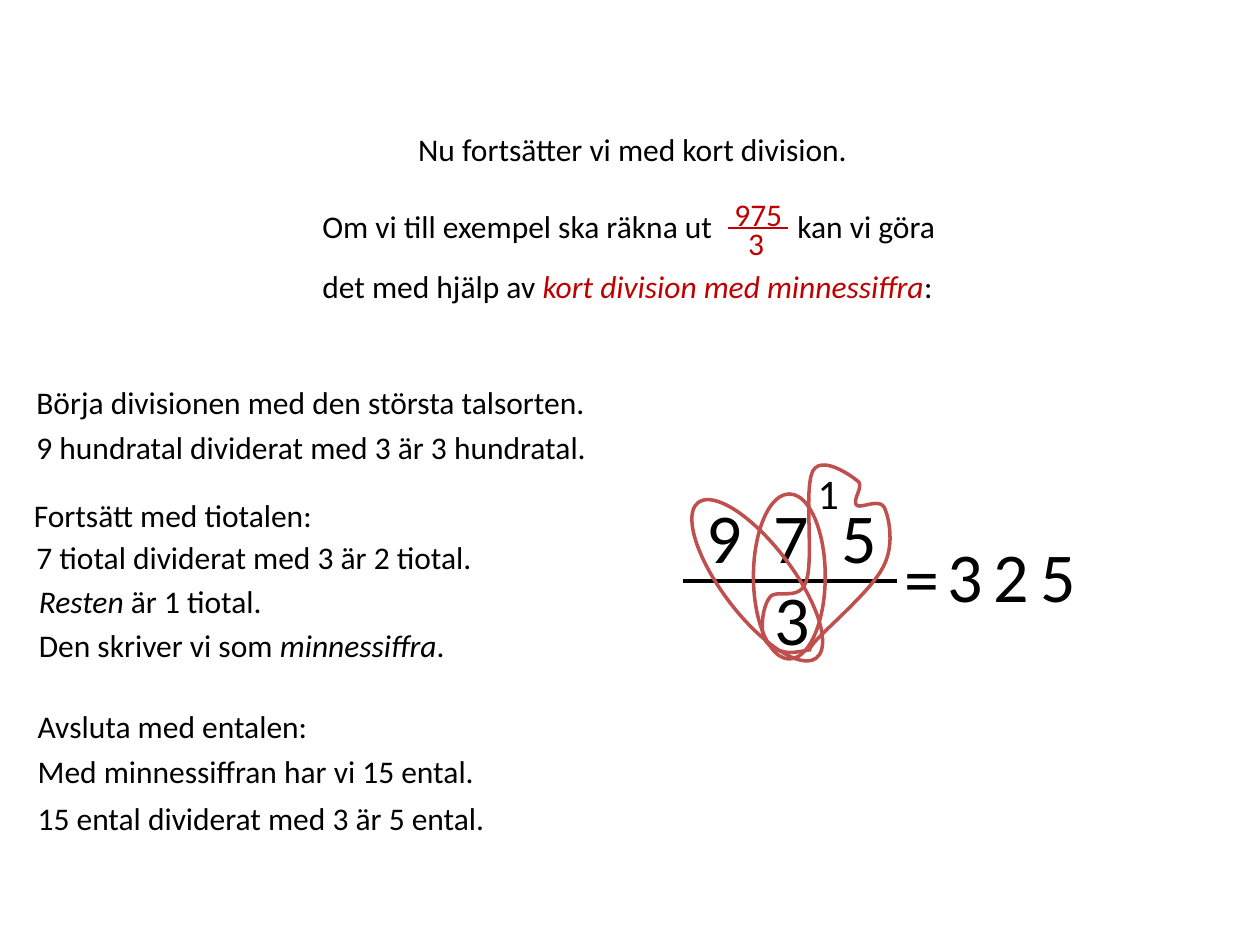
from lxml import etree
from pptx import Presentation
from pptx import util as u
from pptx.dml.color import RGBColor
from pptx.enum import shapes, text
from pptx.oxml.ns import qn

COLOURS = {"ink": "000000", "accent": "C00000", "ring": "C0504D"}


class Board:
    font = "Calibri"
    body_size = 18
    digit_size = 40

    def __init__(self, page):
        self.page = page

    def colour(self, name):
        return RGBColor.from_string(COLOURS[name])

    def label(self, left, top, width, height, lines, size=body_size, colour="ink", gap=0, tabs=()):
        box = self.page.shapes.add_textbox(*map(u.Inches, (left, top, width, height)))
        frame = box.text_frame
        frame.word_wrap = True
        frame.auto_size = text.MSO_AUTO_SIZE.SHAPE_TO_FIT_TEXT
        for index, spans in enumerate(lines):
            para = frame.add_paragraph() if index else frame.paragraphs[0]
            para.font.name = self.font
            para.font.size = u.Pt(size)
            para.font.color.rgb = self.colour(colour)
            if index:
                para.space_before = u.Pt(gap)
            if tabs:
                self.set_tabs(para, tabs)
            for words, *style in spans:
                span = para.add_run()
                span.text = words
                span.font.name = self.font
                span.font.size = u.Pt(size)
                span.font.color.rgb = self.colour("accent" if "accent" in style else colour)
                if "italic" in style:
                    span.font.italic = True

    def set_tabs(self, para, tabs):
        stops = etree.Element(qn("a:tabLst"))
        for position in tabs:
            etree.SubElement(stops, qn("a:tab"), pos=str(u.Inches(position)), algn="l")
        para._p.get_or_add_pPr().find(qn("a:defRPr")).addprevious(stops)

    def digit(self, left, top, width, character):
        self.label(left, top, width, 0.77, [[(character,)]], self.digit_size)

    def bar(self, left, right, y, colour, weight):
        line = self.page.shapes.add_connector(
            shapes.MSO_CONNECTOR.STRAIGHT, *map(u.Inches, (left, y, right, y)))
        line.line.color.rgb = self.colour(colour)
        line.line.width = u.Pt(weight)
        etree.SubElement(line._element.spPr, qn("a:effectLst"))

    def outline(self, shape):
        shape.shadow.inherit = False
        shape.fill.background()
        shape.line.color.rgb = self.colour("ring")
        shape.line.width = u.Pt(2)

    def ring(self, left, top, width, height, rotation=0):
        oval = self.page.shapes.add_shape(
            shapes.MSO_SHAPE.OVAL, *map(u.Inches, (left, top, width, height)))
        oval.rotation = rotation
        self.outline(oval)

    def loop(self, start, curves, steps=12):
        points = []
        current = start
        for x1, y1, x2, y2, x3, y3 in curves:
            corners = (current, (x1, y1), (x2, y2), (x3, y3))
            for step in range(1, steps + 1):
                t = step / steps
                weights = ((1 - t) ** 3, 3 * t * (1 - t) ** 2, 3 * t * t * (1 - t), t ** 3)
                points.append(tuple(
                    u.Inches(sum(w * corner[axis] for w, corner in zip(weights, corners)))
                    for axis in (0, 1)))
            current = (x3, y3)
        builder = self.page.shapes.build_freeform(*map(u.Inches, start))
        builder.add_line_segments(points, close=True)
        self.outline(builder.convert_to_shape())


STEPS = [
    (0.19, 2.99, [("Börja divisionen med den största talsorten.",)]),
    (0.19, 3.35, [("9 hundratal dividerat med 3 är 3 hundratal.",)]),
    (0.17, 3.89, [("Fortsätt med tiotalen:",)]),
    (0.19, 4.22, [("7 tiotal dividerat med 3 är 2 tiotal.",)]),
    (0.21, 4.57, [("Resten", "italic"), (" är 1 tiotal.",)]),
    (0.21, 4.92, [("Den skriver vi som ",), ("minnessiffra", "italic"), (".",)]),
    (0.2, 5.56, [("Avsluta med entalen:",)]),
    (0.2, 5.92, [("Med minnessiffran har vi 15 ental.",)]),
    (0.2, 6.29, [("15 ental dividerat med 3 är 5 ental.",)]),
]

UNITS_LOOP = [
    (6.16, 5.16, 6.08, 5.12, 6.06, 5.05),
    (6.04, 4.98, 6.05, 4.82, 6.11, 4.74),
    (6.16, 4.67, 6.35, 4.78, 6.4, 4.61),
    (6.46, 4.44, 6.38, 3.88, 6.45, 3.74),
    (6.52, 3.61, 6.75, 3.77, 6.81, 3.82),
    (6.86, 3.86, 6.76, 3.97, 6.8, 4.01),
    (6.83, 4.04, 6.98, 3.95, 7.02, 4.03),
    (7.06, 4.12, 7.1, 4.33, 7.01, 4.5),
    (6.92, 4.68, 6.58, 4.97, 6.48, 5.08),
    (6.38, 5.19, 6.46, 5.15, 6.41, 5.16),
    (6.36, 5.17, 6.27, 5.19, 6.21, 5.17),
]


def main():
    deck = Presentation()
    deck.slide_width, deck.slide_height = u.Inches(10), u.Inches(7.5)
    board = Board(deck.slides.add_slide(deck.slide_layouts[6]))

    board.label(3.22, 0.98, 3.83, 0.4, [[("Nu fortsätter vi med kort division.",)]])
    board.label(2.46, 1.59, 5.42, 0.89, [
        [("Om vi till exempel ska räkna ut\tkan vi göra",)],
        [("det med hjälp av ",), ("kort division med minnessiffra", "accent", "italic"), (":",)],
    ], gap=12.8, tabs=[3.77])
    board.label(5.73, 1.5, 0.73, 0.4, [[("975",)]], colour="accent")
    board.label(5.84, 1.73, 0.36, 0.4, [[("3",)]], colour="accent")
    board.bar(5.78, 6.25, 1.81, "accent", 1.5)

    for left, top, spans in STEPS:
        board.label(left, top, 4.95, 0.4, [spans])

    board.label(5.51, 3.87, 2.24, 0.77, [[("9\t7\t5",)]], board.digit_size, tabs=[0.53, 1.07])
    board.digit(6.05, 4.52, 0.63, "3")
    board.bar(5.42, 7.12, 4.61, "ink", 2.25)
    board.digit(7.08, 4.19, 0.46, "=")
    for index, character in enumerate("325"):
        board.digit(7.42 + 0.37 * index, 4.18, 0.46, character)
    board.label(6.39, 3.66, 0.55, 0.5, [[("1",)]], 24)

    board.ring(5.73, 3.83, 0.56, 1.55, 322.8)
    board.ring(5.98, 3.92, 0.57, 1.31)
    board.loop((6.21, 5.17), UNITS_LOOP)

    deck.save("out.pptx")


if __name__ == "__main__":
    main()
